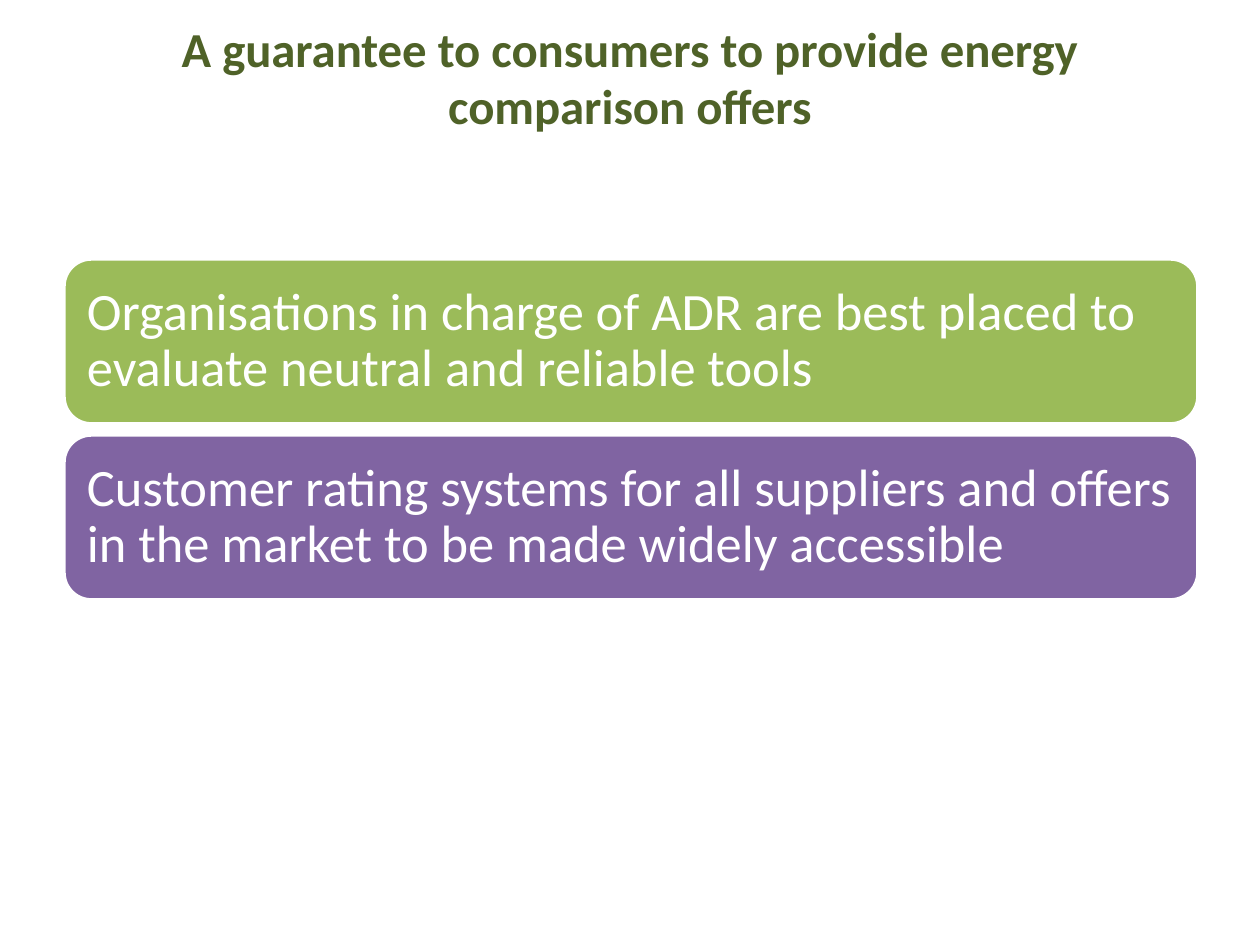
from pptx import Presentation
from pptx.dml.color import RGBColor
from pptx.enum.shapes import MSO_SHAPE as Shape
from pptx.enum.text import MSO_ANCHOR as Anchor, PP_ALIGN as Align
from pptx.util import Emu, Pt

PX = 914400 // 126
FONT = "Calibri"
COLORS = {"title": "4F6228", "green": "9BBB59", "purple": "8064A2", "white": "FFFFFF"}
TITLE = "A guarantee to consumers to provide energy comparison offers"
STATEMENTS = [
    ("Organisations in charge of ADR are best placed to evaluate neutral and reliable tools", "green"),
    ("Customer rating systems for all suppliers and offers in the market to be made widely accessible", "purple"),
]


def px(length):
    return Emu(length * PX)


def color(name):
    return RGBColor.from_string(COLORS[name])


def write(frame, text, size, color_name, align, spacing, bold=False):
    frame.word_wrap = True
    frame.vertical_anchor = Anchor.MIDDLE
    frame.text = text
    paragraph = frame.paragraphs[0]
    paragraph.alignment = align
    paragraph.line_spacing = spacing
    font = paragraph.runs[0].font
    font.name, font.size, font.bold = FONT, Pt(size), bold
    font.color.rgb = color(color_name)


def add_title(slide, left, top, width, height):
    title = slide.shapes.add_textbox(px(left), px(top), px(width), px(height))
    write(title.text_frame, TITLE, 27.9, "title", Align.CENTER, 0.97, bold=True)


def add_statements(slide, left, top, width, height, gap):
    """Stack one rounded band per statement, sharing the height equally."""
    count = len(STATEMENTS)
    band_height = (height - gap * (count - 1)) // count
    for index, (statement, fill) in enumerate(STATEMENTS):
        band_top = top + index * (band_height + gap)
        band = slide.shapes.add_shape(
            Shape.ROUNDED_RECTANGLE, px(left), px(band_top), px(width), px(band_height))
        band.shadow.inherit = False
        band.fill.solid()
        band.fill.fore_color.rgb = color(fill)
        band.line.color.rgb = color("white")
        band.line.width = Pt(2)
        frame = band.text_frame
        frame.margin_left = frame.margin_top = frame.margin_bottom = px(15)
        frame.margin_right = px(12)
        write(frame, statement, 30, "white", Align.LEFT, 0.9)


def main():
    deck = Presentation()
    deck.slide_width, deck.slide_height = px(1260), px(945)
    slide = deck.slides.add_slide(deck.slide_layouts[6])
    add_title(slide, left=63, top=14, width=1134, height=130)
    add_statements(slide, left=64, top=259, width=1134, height=341, gap=11)
    deck.save("out.pptx")


if __name__ == "__main__":
    main()
